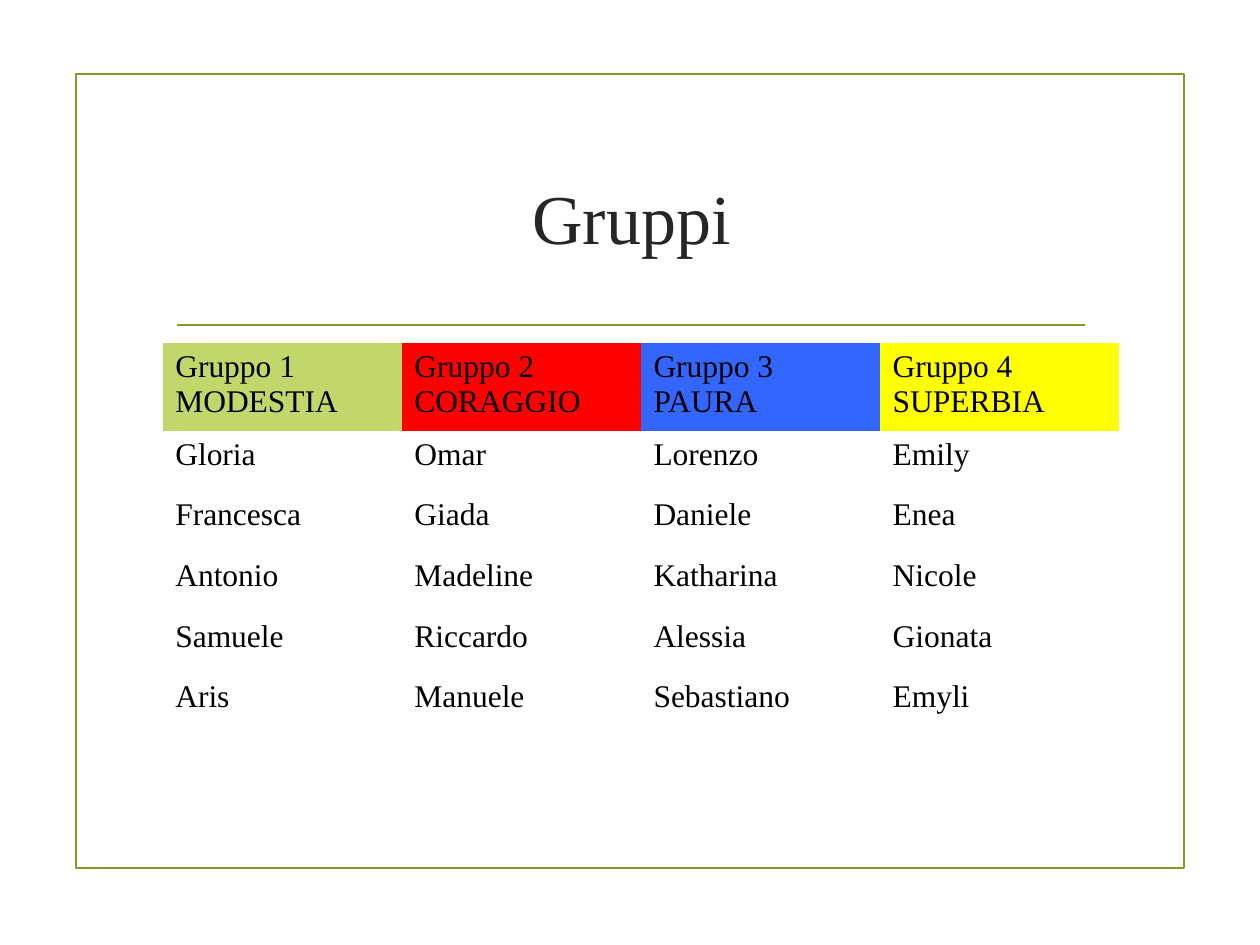
"""Build the slide that lists the four groups and their members."""
from dataclasses import dataclass

from lxml.etree import SubElement
from pptx import Presentation
from pptx.dml.color import RGBColor as RGB
from pptx.enum.shapes import MSO_CONNECTOR as Link, MSO_SHAPE as Shape
from pptx.enum.text import MSO_ANCHOR as Anchor, PP_ALIGN as Align
from pptx.oxml.ns import qn
from pptx.util import Cm, Pt


@dataclass(frozen=True)
class Theme:
    font: str = "Times New Roman"
    green: str = "83992A"
    dark: str = "262626"
    black: str = "000000"
    line: float = 1.25
    title: int = 40
    body: int = 18


theme = Theme()
groups = [
    ("Gruppo 1\nMODESTIA", "C1D66B", ["Gloria", "Francesca", "Antonio", "Samuele", "Aris"]),
    ("Gruppo 2\nCORAGGIO", "FF0000", ["Omar", "Giada", "Madeline", "Riccardo", "Manuele"]),
    ("Gruppo 3\nPAURA", "3366FF", ["Lorenzo", "Daniele", "Katharina", "Alessia", "Sebastiano"]),
    ("Gruppo 4\nSUPERBIA", "FFFF00", ["Emily", "Enea", "Nicole", "Gionata", "Emyli"]),
]
count = 8


def style(frame, size, color):
    for para in frame.paragraphs:
        for run in para.runs:
            run.font.name = theme.font
            run.font.size = Pt(size)
            run.font.color.rgb = RGB.from_string(color)


def stroke(item):
    item.line.color.rgb = RGB.from_string(theme.green)
    item.line.width = Pt(theme.line)


deck = Presentation()
deck.slide_width, deck.slide_height = Cm(25.4), Cm(19.05)
slide = deck.slides.add_slide(deck.slide_layouts[6])
shapes = slide.shapes

border = shapes.add_shape(Shape.RECTANGLE, Cm(1.54), Cm(1.5), Cm(22.33), Cm(16))
border.shadow.inherit = False
border.fill.background()
stroke(border)

rule = shapes.add_connector(Link.STRAIGHT, Cm(3.56), Cm(6.55), Cm(21.87), Cm(6.55))
stroke(rule)
SubElement(rule._element.spPr, qn("a:effectLst"))

title = shapes.add_textbox(Cm(3.28), Cm(2.54), Cm(18.9), Cm(3.63)).text_frame
title.word_wrap = True
title.vertical_anchor = Anchor.MIDDLE
title.text = "Gruppi"
title.paragraphs[0].alignment = Align.CENTER
style(title, theme.title, theme.dark)

frame = shapes.add_table(count, len(groups), Cm(3.28), Cm(6.91), Cm(19.28), Cm(11.46))
table = frame.table
table.first_row = table.horz_banding = False
plain = "{2D5ABB26-0587-4C30-8999-92F81FD0307C}"
table._tbl.tblPr.find(qn("a:tableStyleId")).text = plain
for row in table.rows:
    row.height = Cm(1.22)
frame.height = Cm(11.46)

for col, (head, color, names) in enumerate(groups):
    table.columns[col].width = Cm(4.82)
    for row in range(count):
        table.cell(row, col).fill.background()
    for row, text in enumerate([head, *names]):
        cell = table.cell(row, col)
        cell.text_frame.text = text
        style(cell.text_frame, theme.body, theme.black)
    top = table.cell(0, col)
    top.fill.solid()
    top.fill.fore_color.rgb = RGB.from_string(color)

deck.save("out.pptx")
